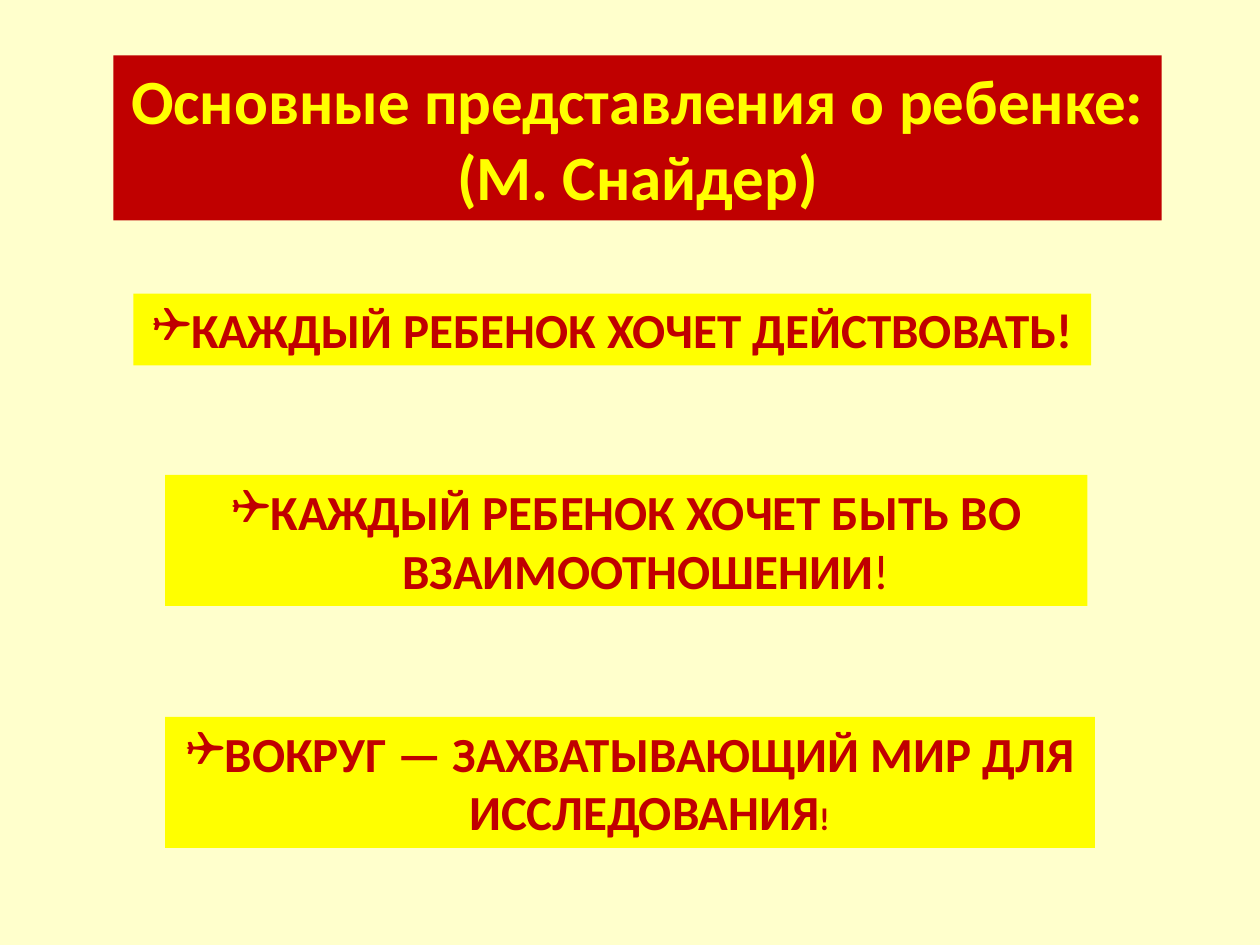
from lxml import etree
from pptx import Presentation
from pptx.dml.color import RGBColor
from pptx.enum import shapes, text
from pptx.oxml.ns import qn
from pptx.util import Inches, Pt

CREAM = RGBColor(0xFF, 0xFF, 0xCC)
YELLOW = RGBColor(0xFF, 0xFF, 0x00)
RED = RGBColor(0xC0, 0x00, 0x00)

TITLE = ["Основные представления о ребенке:", "(М. Снайдер)"]
# box, wrap, wording, format of the closing mark
IDEAS = [
    ((1.06, 2.33, 7.6, 0.57), False, "КАЖДЫЙ РЕБЕНОК ХОЧЕТ ДЕЙСТВОВАТЬ", {}),
    ((1.31, 3.77, 7.32, 1.04), True,
     "КАЖДЫЙ РЕБЕНОК ХОЧЕТ БЫТЬ ВО ВЗАИМООТНОШЕНИИ", {"bold": False}),
    ((1.31, 5.69, 7.38, 1.04), True,
     "ВОКРУГ — ЗАХВАТЫВАЮЩИЙ МИР ДЛЯ ИССЛЕДОВАНИЯ", {"size": Pt(18)}),
]


def add_panel(slide, box, fill, wrap):
    """Draw a filled box without outline and return its text frame."""
    panel = slide.shapes.add_shape(
        shapes.MSO_SHAPE.RECTANGLE, *(Inches(n) for n in box))
    panel.shadow.inherit = False
    panel.fill.solid()
    panel.fill.fore_color.rgb = fill
    panel.line.fill.background()
    frame = panel.text_frame
    look = {"word_wrap": wrap, "vertical_anchor": text.MSO_ANCHOR.TOP,
            "auto_size": text.MSO_AUTO_SIZE.SHAPE_TO_FIT_TEXT}
    for name, value in look.items():
        setattr(frame, name, value)
    return frame


def add_run(para, words, color, **look):
    run = para.add_run()
    run.text = words
    run.font.color.rgb = color
    for name, value in ({"name": "Calibri", "bold": True} | look).items():
        setattr(run.font, name, value)


def add_bullet(para):
    props = para._p.get_or_add_pPr()
    indent = Inches(0.31)
    props.set("marL", str(indent))
    props.set("indent", str(-indent))
    etree.SubElement(props, qn("a:buFont"), typeface="Wingdings")
    etree.SubElement(props, qn("a:buChar"), char="❑")


def add_title(slide, box):
    frame = add_panel(slide, box, RED, False)
    for i, line in enumerate(TITLE):
        para = frame.add_paragraph() if i else frame.paragraphs[0]
        para.alignment = text.PP_ALIGN.CENTER
        add_run(para, line, YELLOW, size=Pt(36))


def add_idea(slide, box, wrap, words, mark):
    para = add_panel(slide, box, YELLOW, wrap).paragraphs[0]
    para.alignment = text.PP_ALIGN.CENTER
    add_bullet(para)
    base = {"size": Pt(28)}
    add_run(para, words, RED, **base)
    add_run(para, "!", RED, **(base | mark))


def main():
    deck = Presentation()
    deck.slide_width, deck.slide_height = Inches(10), Inches(7.5)
    slide = deck.slides.add_slide(deck.slide_layouts[6])
    slide.background.fill.solid()
    slide.background.fill.fore_color.rgb = CREAM
    for idea in IDEAS:
        add_idea(slide, *idea)
    add_title(slide, (0.9, 0.44, 8.32, 1.31))
    deck.save("out.pptx")


if __name__ == "__main__":
    main()
